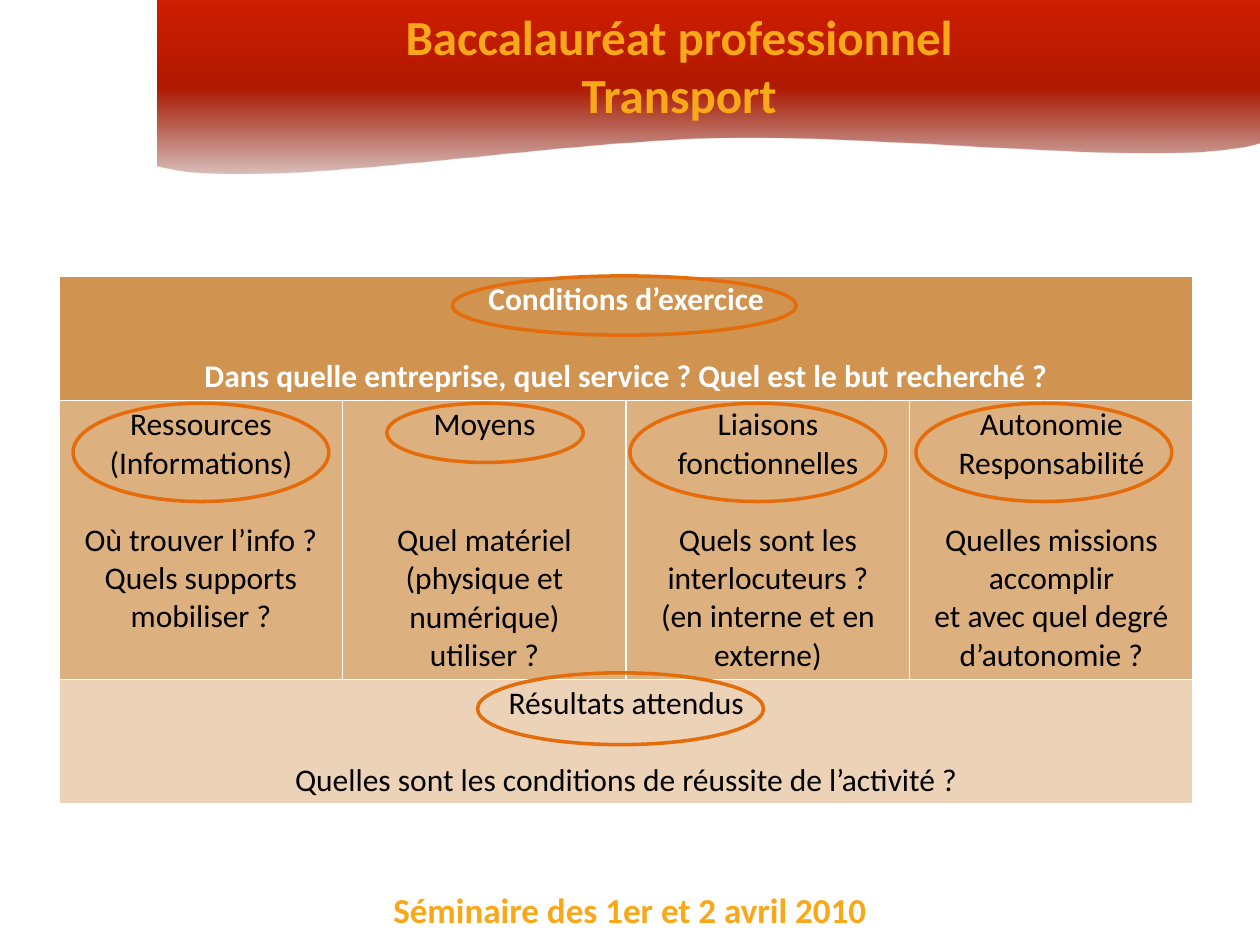
from lxml.etree import SubElement
from pptx import Presentation
from pptx.dml.color import RGBColor
from pptx.enum.shapes import MSO_SHAPE as Preset
from pptx.enum.text import PP_ALIGN as Align
from pptx.oxml.ns import qn
from pptx.util import Inches, Pt

WIDTH, HEIGHT = Inches(10), Inches(7.5)
GOLD = RGBColor(0xF8, 0xA8, 0x18)
ORANGE = RGBColor(0xE4, 0x6C, 0x0A)
WHITE = RGBColor(0xFF, 0xFF, 0xFF)
BLACK = RGBColor(0x00, 0x00, 0x00)
TAN_DARK = RGBColor(0xD0, 0x93, 0x50)
TAN = RGBColor(0xDD, 0xB0, 0x7F)
TAN_LIGHT = RGBColor(0xEC, 0xD2, 0xB6)
RED_DARK = RGBColor(0x7B, 0x11, 0x00)
RED = RGBColor(0xAF, 0x19, 0x00)
RED_BRIGHT = RGBColor(0xD0, 0x1D, 0x00)

BANNER_STOPS = [(0, RED_DARK, 27), (50, RED, 100), (100, RED_BRIGHT, 100)]
BANNER_CURVES = [
    [(100, 15.07), (92.9, 17.87), (71.6, 14.13), (57, 14.53)],
    [(57, 14.53), (42.4, 14.93), (19.9, 20.4), (12.5, 17.47)],
]
CURVE_STEPS = 24
BODY_LINE = Pt(22)

CONDITIONS = (["Conditions d’exercice"],
              ["Dans quelle entreprise, quel service ? Quel est le but recherché ?"], 1)
RESULTS = (["Résultats attendus"],
           ["Quelles sont les conditions de réussite de l’activité ?"], 1)
TOPICS = [
    (["Ressources", "(Informations)"],
     ["Où trouver l’info ?", "Quels supports mobiliser ?"], 1),
    (["Moyens"], ["Quel matériel (physique et numérique)", "utiliser ?"], 2),
    (["Liaisons fonctionnelles"],
     ["Quels sont les interlocuteurs ?", "(en interne et en externe)"], 1),
    (["Autonomie", "Responsabilité"],
     ["Quelles missions", "accomplir", "et avec quel degré d’autonomie ?"], 1),
]
RINGS = [
    (5.8, 42.67, 20.3, 10.4),
    (30.7, 42.67, 15.6, 6.27),
    (50, 42.67, 20.3, 10.4),
    (72.7, 42.67, 20.3, 10.4),
    (37.9, 71.2, 22.7, 7.6),
    (35.9, 29.2, 27.3, 6.27),
]


def across(percent):
    return round(WIDTH * percent / 100)


def down(percent):
    return round(HEIGHT * percent / 100)


def area(left, top, width, height):
    return across(left), down(top), across(width), down(height)


def write_lines(frame, lines, color, size, bold):
    font_format = {"name": "Calibri", "size": Pt(size), "bold": bold}
    for index, line in enumerate(lines):
        paragraph = frame.add_paragraph() if index else frame.paragraphs[0]
        paragraph.alignment = Align.CENTER
        run = paragraph.add_run()
        run.text = line
        for attribute, value in font_format.items():
            setattr(run.font, attribute, value)
        run.font.color.rgb = color


def add_caption(slide, box, lines, size):
    frame = slide.shapes.add_textbox(*area(*box)).text_frame
    frame.word_wrap = True
    write_lines(frame, lines, GOLD, size, True)


def curve_points(start, pull_out, pull_in, end):
    for step in range(1, CURVE_STEPS + 1):
        t = step / CURVE_STEPS
        weights = ((1 - t) ** 3, 3 * t * (1 - t) ** 2, 3 * t * t * (1 - t), t ** 3)
        anchors = (start, pull_out, pull_in, end)
        x, y = (sum(w * a[axis] for w, a in zip(weights, anchors)) for axis in (0, 1))
        yield across(x), down(y)


def fill_gradient(shape, stops, angle):
    shape.fill.gradient()
    gradient = shape._element.spPr.find(qn("a:gradFill"))
    for child in list(gradient):
        gradient.remove(child)
    stop_list = SubElement(gradient, qn("a:gsLst"))
    for position, color, opacity in stops:
        stop = SubElement(stop_list, qn("a:gs"), pos=str(position * 1000))
        tint = SubElement(stop, qn("a:srgbClr"), val=str(color))
        if opacity < 100:
            SubElement(tint, qn("a:alpha"), val=str(opacity * 1000))
    SubElement(gradient, qn("a:lin"), ang=str(angle * 60000), scaled="0")


def add_banner(slide):
    outline = slide.shapes.build_freeform(across(12.5), 0)
    outline.add_line_segments([(across(100), 0), (across(100), down(15.07))], close=False)
    for curve in BANNER_CURVES:
        outline.add_line_segments(list(curve_points(*curve)), close=False)
    outline.add_line_segments([(across(12.5), 0)], close=True)
    banner = outline.convert_to_shape()
    banner.shadow.inherit = False
    banner.line.fill.background()
    fill_gradient(banner, BANNER_STOPS, 270)


def fill_cell(cell, content, background, color, bold=False):
    heading, questions, gap_lines = content
    margins = {"margin_left": Inches(0.08), "margin_right": Inches(0.08),
               "margin_top": Inches(0.04), "margin_bottom": Inches(0.04)}
    for attribute, value in margins.items():
        setattr(cell, attribute, value)
    cell.fill.solid()
    cell.fill.fore_color.rgb = background
    write_lines(cell.text_frame, heading + questions, color, 18, bold)
    cell.text_frame.paragraphs[len(heading)].space_before = gap_lines * BODY_LINE


def add_activity_table(slide):
    table = slide.shapes.add_table(3, len(TOPICS), *area(4.7, 29.2, 90, 55.9)).table
    for row, height in zip(table.rows, (13.2, 29.5, 13.2)):
        row.height = down(height)
    for row, content, background, color, bold in (
        (0, CONDITIONS, TAN_DARK, WHITE, True),
        (2, RESULTS, TAN_LIGHT, BLACK, False),
    ):
        table.cell(row, 0).merge(table.cell(row, len(TOPICS) - 1))
        fill_cell(table.cell(row, 0), content, background, color, bold)
    for column, topic in enumerate(TOPICS):
        fill_cell(table.cell(1, column), topic, TAN, BLACK)


def add_ring(slide, box):
    ring = slide.shapes.add_shape(Preset.OVAL, *area(*box))
    ring.shadow.inherit = False
    ring.fill.background()
    ring.line.color.rgb = ORANGE
    ring.line.width = Pt(2)


def main():
    deck = Presentation()
    deck.slide_width, deck.slide_height = WIDTH, HEIGHT
    slide = deck.slides.add_slide(deck.slide_layouts[6])
    add_caption(slide, (25, 93.33, 50, 5.87), ["Séminaire des 1er et 2 avril 2010"], 20)
    add_banner(slide)
    add_caption(slide, (28.9, 0, 50, 13.87), ["Baccalauréat professionnel", "Transport"], 28)
    add_activity_table(slide)
    for box in RINGS:
        add_ring(slide, box)
    deck.save("out.pptx")


if __name__ == "__main__":
    main()
